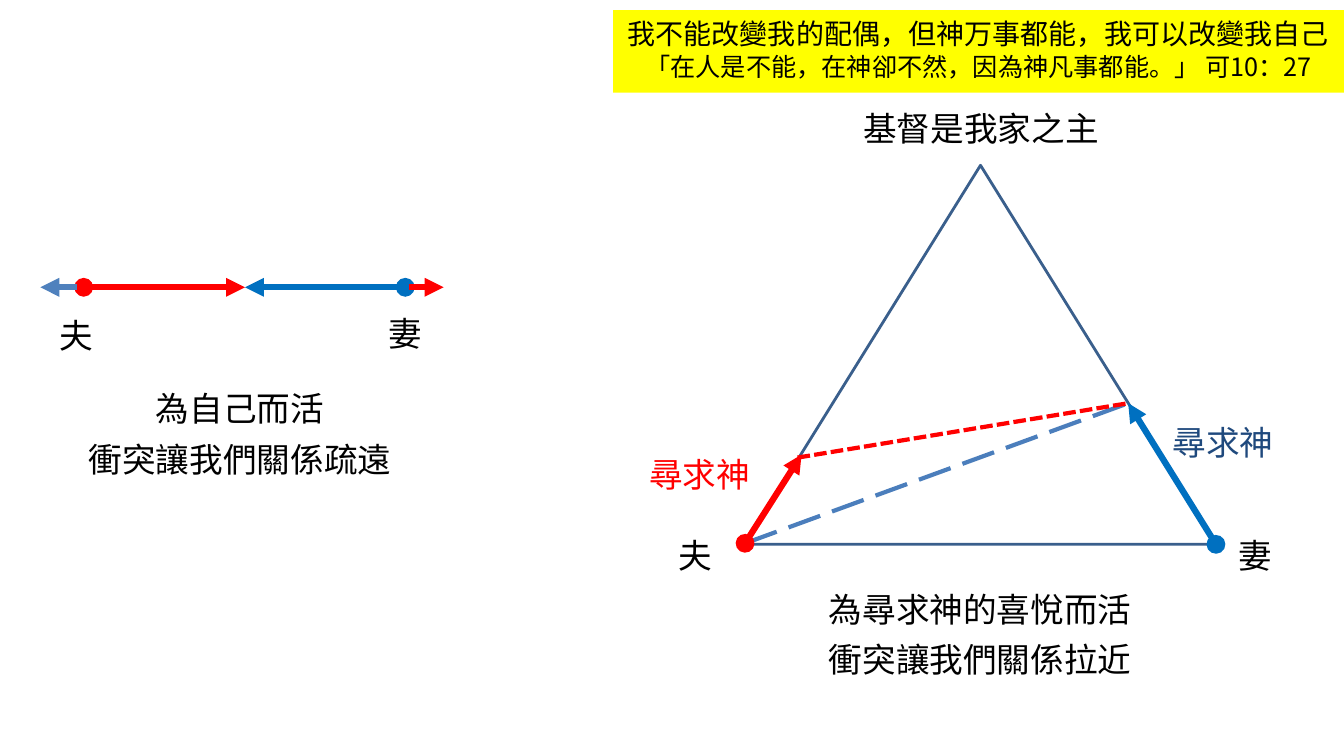
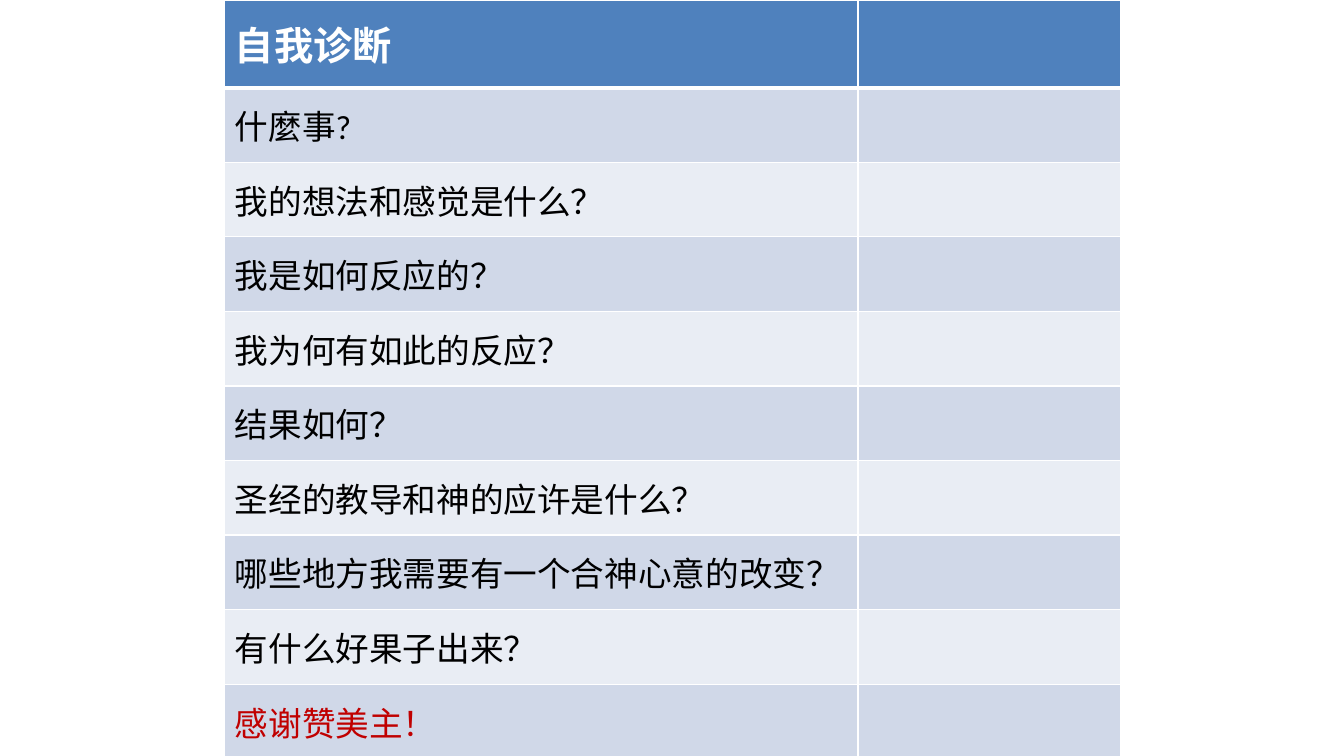
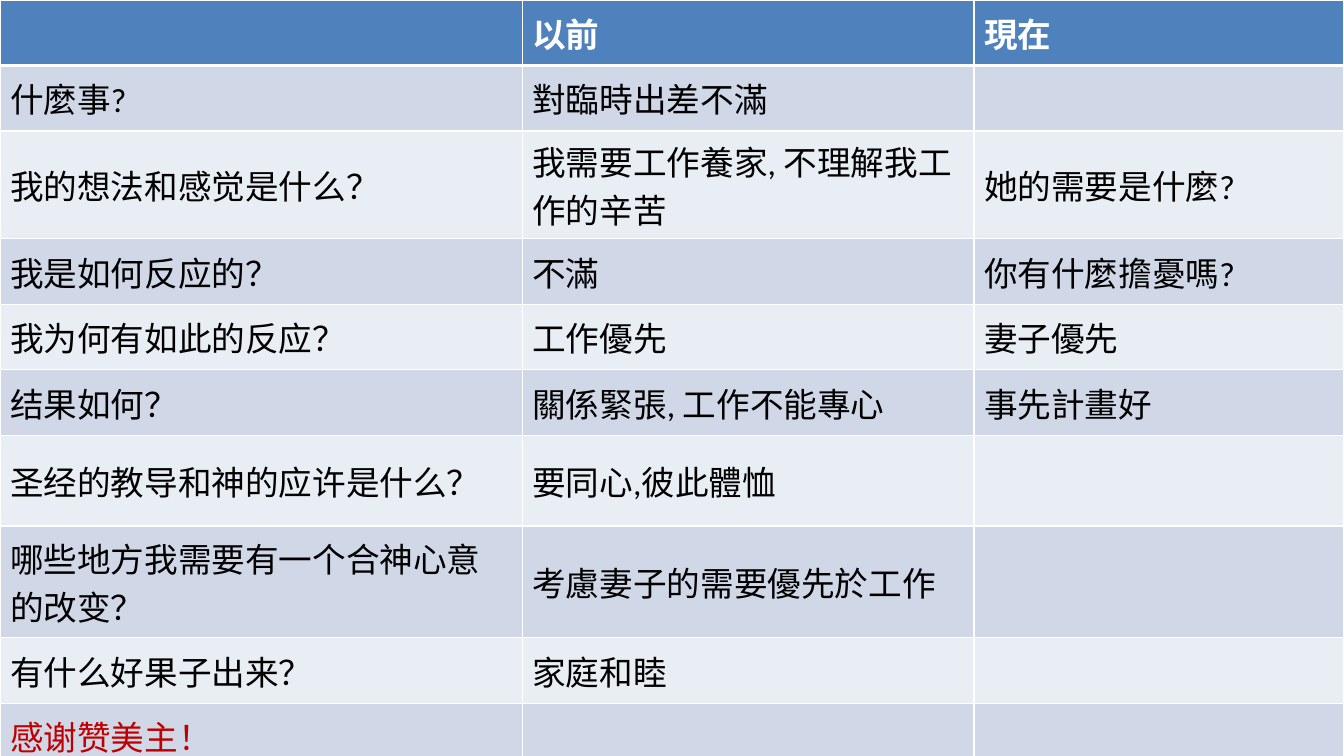
from lxml import etree
from pptx import Presentation
from pptx import util as u
from pptx.dml.color import RGBColor
from pptx.enum import dml, shapes, text
from pptx.oxml.ns import qn

CJK, LATIN = "Noto Sans CJK SC", "Calibri"
BLACK, WHITE, RED, BLUE = "000000", "FFFFFF", "FF0000", "0070C0"
ACCENT, NAVY, YELLOW, DARK_RED = "4F81BD", "1F497D", "FFFF00", "C00000"
BANDS = ("D0D8E8", "E9EDF4")
CENTER, LEFT = text.PP_ALIGN.CENTER, text.PP_ALIGN.LEFT
QUESTIONS = [
    "什麼事?",
    "我的想法和感觉是什么？",
    "我是如何反应的？",
    "我为何有如此的反应？",
    "结果如何？",
    "圣经的教导和神的应许是什么？",
    "哪些地方我需要有一个合神心意的改变？",
    "有什么好果子出来？",
    "感谢赞美主！",
]
BEFORE = [
    "對臨時出差不滿",
    "我需要工作養家, 不理解我工作的辛苦",
    "不滿",
    "工作優先",
    "關係緊張, 工作不能專心",
    "要同心,彼此體恤",
    "考慮妻子的需要優先於工作",
    "家庭和睦",
    "",
]
NOW = ["", "她的需要是什麼?", "你有什麼擔憂嗎?", "妻子優先", "事先計畫好", "", "", "", ""]


def rgb(value):
    return RGBColor.from_string(value)


def inches(*values):
    return [u.Inches(v) for v in values]


def add_run(p, words, size=24, color=BLACK, bold=False, font=CJK):
    r = p.add_run()
    r.text = words
    r.font.size = u.Pt(size)
    r.font.bold = bold
    r.font.name = font
    r.font.color.rgb = rgb(color)
    etree.SubElement(r.font._element, qn("a:ea"), typeface=CJK)


def add_text(s, at, lines, color=BLACK, align=CENTER, spacing=1.0, top=0.05, fill=None, font=CJK):
    sp = s.shapes.add_textbox(*inches(*at))
    if fill:
        sp.fill.solid()
        sp.fill.fore_color.rgb = rgb(fill)
    tf = sp.text_frame
    tf.word_wrap = True
    tf.margin_top = u.Inches(top)
    for i, (words, size) in enumerate(lines):
        p = tf.add_paragraph() if i else tf.paragraphs[0]
        p.alignment = align
        p.line_spacing = spacing
        add_run(p, words, size, color, font=font)


def add_label(s, left, top, width, words, **style):
    add_text(s, (left, top, width, 0.5), [(words, 24)], top=0, **style)


def add_caption(s, left, top, *lines):
    add_text(s, (left, top, 3.62, 1.22), [(words, 24) for words in lines], spacing=1.25)


def add_line(s, start, end, color, width=4.5, dash=None, head=None, tail=None):
    sp = s.shapes.add_connector(shapes.MSO_CONNECTOR.STRAIGHT, *inches(*start, *end))
    sp.line.color.rgb = rgb(color)
    sp.line.width = u.Pt(width)
    if dash:
        sp.line.dash_style = dash
    ln = sp.line._get_or_add_ln()
    for tag, kind in (("a:headEnd", head), ("a:tailEnd", tail)):
        if kind:
            etree.SubElement(ln, qn(tag), type=kind)
    etree.SubElement(sp._element.spPr, qn("a:effectLst"))


def add_arrow(s, start, end, color, head=None):
    add_line(s, start, end, color, head=head, tail="triangle")


def add_border(cell, side, width):
    ln = etree.SubElement(cell._tc.get_or_add_tcPr(), qn("a:ln" + side), w=str(u.Pt(width)))
    fill = etree.SubElement(ln, qn("a:solidFill"))
    etree.SubElement(fill, qn("a:srgbClr"), val=WHITE)


def fill_cell(cell, row, words, header_size):
    for side in "LRTB":
        thick = (row, side) in ((0, "B"), (1, "T"))
        add_border(cell, side, 3 if thick else 1)
    cell.fill.solid()
    cell.fill.fore_color.rgb = rgb(BANDS[(row - 1) % 2] if row else ACCENT)
    cell.vertical_anchor = text.MSO_ANCHOR.MIDDLE
    if words:
        color = WHITE if row == 0 else DARK_RED if words == QUESTIONS[-1] else BLACK
        size = 24 if row else header_size
        add_run(cell.text_frame.paragraphs[0], words, size, color, row == 0, LATIN)


def add_grid(s, left, widths, heights, columns, header_size=24):
    at = inches(left, 0, sum(widths), sum(heights))
    table = s.shapes.add_table(len(heights), len(widths), *at).table
    for column, width in zip(table.columns, widths):
        column.width = u.Inches(width)
    for row, height in zip(table.rows, heights):
        row.height = u.Inches(height)
    for c, column in enumerate(columns):
        for r, words in enumerate(column):
            fill_cell(table.cell(r, c), r, words, header_size)


def draw_conflict(s):
    y, middle = 2.85, 2.43
    add_arrow(s, (0.83, y), (middle, y), RED, "oval")
    add_arrow(s, (4.02, y), (middle, y), BLUE, "oval")
    add_label(s, 0.12, 3.12, 1.28, "夫")
    add_label(s, 3.38, 3.1, 1.28, "妻")
    add_caption(s, 0.57, 3.7, "為自己而活", "衝突讓我們關係疏遠")
    add_arrow(s, (4.06, y), (4.4, y), RED)
    add_arrow(s, (0.76, y), (0.4, y), ACCENT)


def draw_triangle(s):
    husband, wife, wife_goal = (7.39, 5.39), (12.06, 5.4), (11.19, 4)
    sp = s.shapes.add_shape(shapes.MSO_SHAPE.ISOSCELES_TRIANGLE, *inches(7.39, 1.64, 4.67, 3.76))
    sp.shadow.inherit = False
    sp.fill.solid()
    sp.fill.fore_color.rgb = rgb(WHITE)
    sp.line.color.rgb = rgb("3A5F8C")
    sp.line.width = u.Pt(2)
    add_label(s, 8.27, 1.07, 2.92, "基督是我家之主")
    add_label(s, 6.26, 5.31, 1.28, "夫")
    add_label(s, 11.81, 5.31, 1.28, "妻")
    add_line(s, husband, wife_goal, "4B7EBC", 3, dml.MSO_LINE.LONG_DASH)
    add_line(s, (7.91, 4.54), wife_goal, RED, 3, dml.MSO_LINE.SQUARE_DOT)
    add_caption(s, 7.91, 5.69, "為尋求神的喜悅而活", "衝突讓我們關係拉近")
    add_arrow(s, wife, wife_goal, BLUE, "oval")
    add_label(s, 11.53, 4.19, 1.45, "尋求神", color=NAVY, align=LEFT, font=LATIN)
    add_arrow(s, husband, (7.95, 4.51), RED, "oval")
    add_label(s, 6.34, 4.5, 1.45, "尋求神", color=RED, align=LEFT, font=LATIN)


def main():
    prs = Presentation()
    prs.slide_width, prs.slide_height = inches(13.33, 7.5)
    relationship, diagnosis, example = [
        prs.slides.add_slide(prs.slide_layouts[6]) for _ in range(3)
    ]

    draw_triangle(relationship)
    banner = [
        ("我不能改變我的配偶，但神万事都能，我可以改變我自己", 20),
        ("「在人是不能，在神卻不然，因為神凡事都能。」 可10：27", 18),
    ]
    add_text(relationship, (6.08, 0.1, 7.25, 0.82), banner, spacing=1.04, fill=YELLOW)
    draw_conflict(relationship)

    add_grid(
        diagnosis, 2.23, [6.28, 2.6], [0.87] + [0.74] * 9,
        [["自我诊断"] + QUESTIONS, [""] * 10], header_size=28,
    )
    add_grid(
        example, 0, [5.18, 4.48, 3.67],
        [0.65, 0.65, 0.96, 0.65, 0.65, 0.65, 0.9, 1.11, 0.65, 0.65],
        [[""] + QUESTIONS, ["以前"] + BEFORE, ["現在"] + NOW],
    )
    prs.save("out.pptx")


if __name__ == "__main__":
    main()
